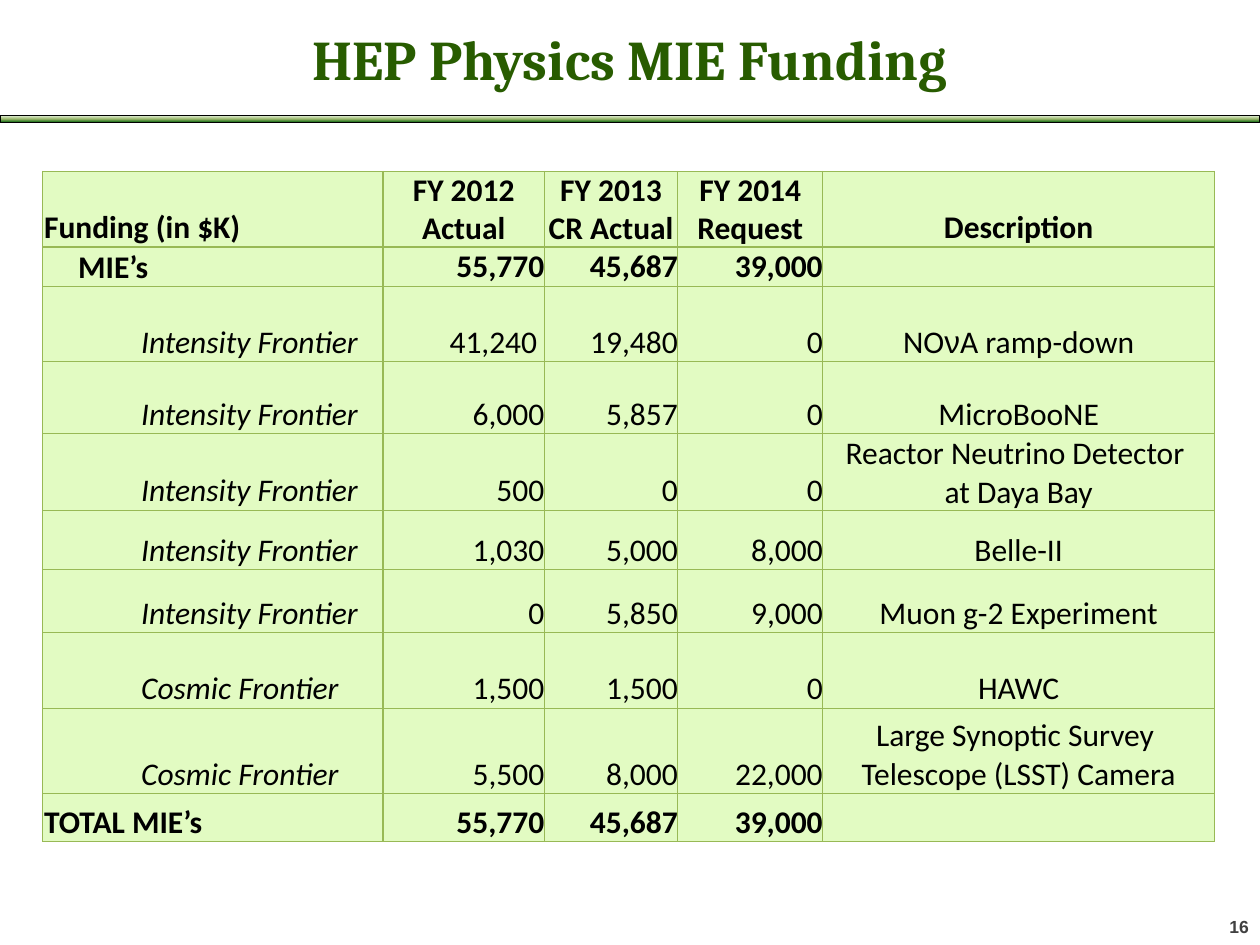
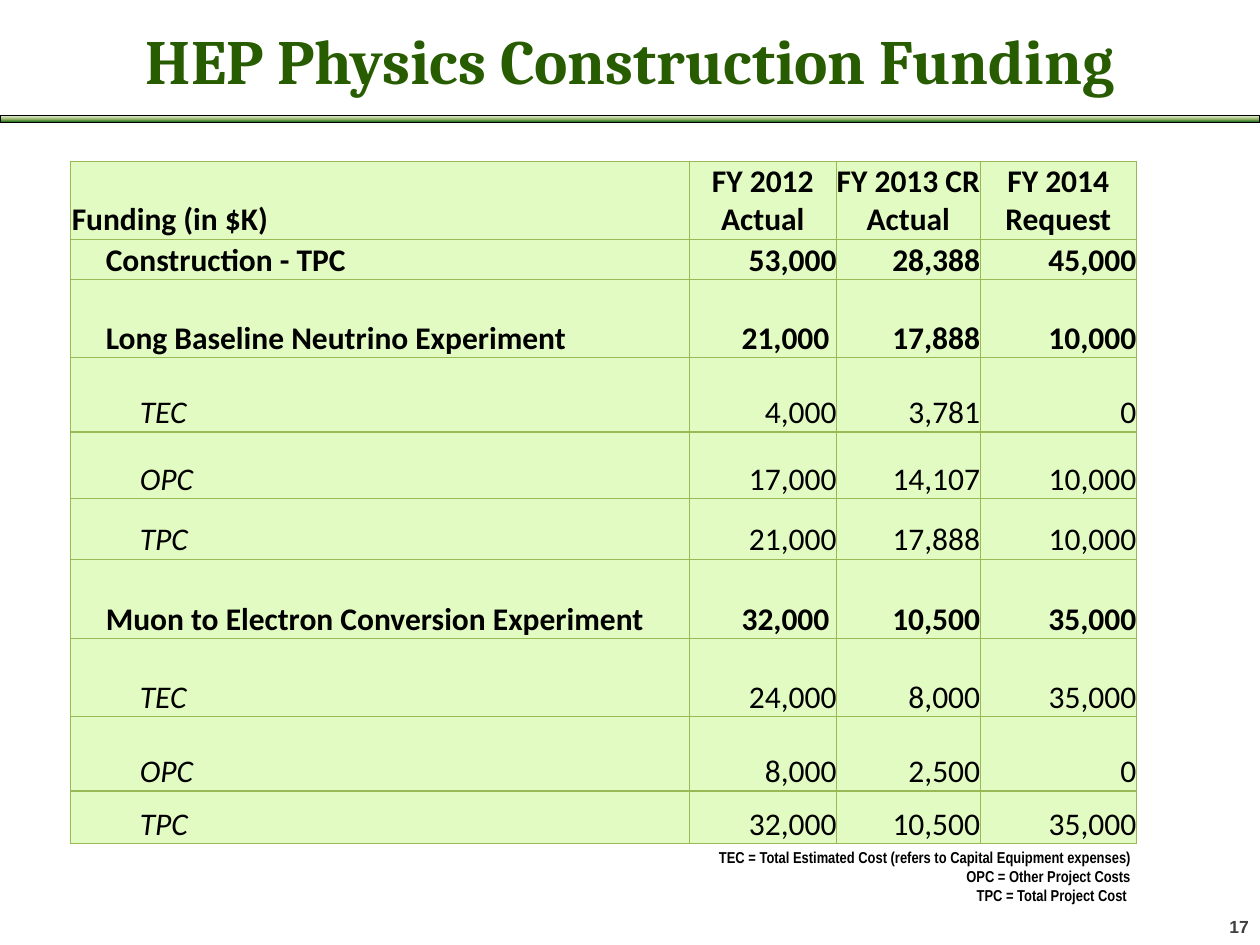
from lxml import etree
from pptx import Presentation
from pptx.dml.color import RGBColor
from pptx.enum import shapes, text
from pptx.oxml import ns
from pptx.util import Inches, Pt

HUES = {"title": "285C00", "cell": "E2FBC2", "edge": "98B955", "ink": "000000",
        "page": "404040", "top": "DDEBCF", "mid": "9CB86E", "low": "156B13"}

# style: bold, italic, left inset of the first column
STYLES = {"head": (True, False, 0.01), "main": (True, False, 0.28),
          "item": (False, True, 0.78), "part": (False, True, 0.55)}

YEARS = ["FY 2012 Actual", "FY 2013 CR Actual", "FY 2014 Request"]
NOVA = [("NO", "Calibri"), ("ν", "Arial"), ("A ramp-down", "Calibri")]

# each row: style, height, cells
SLIDES = [
    {"title": "HEP Physics MIE Funding", "size": 32, "top": 0.17, "page": "16",
     "spot": (0.34, 1.36), "cols": [2.7, 1.28, 1.06, 1.15, 3.11],
     "rows": [
         ("head", 0.6, ["Funding (in $K)", *YEARS, "Description"]),
         ("main", 0.31, ["MIE’s", "55,770", "45,687", "39,000", ""]),
         ("item", 0.6, ["Intensity Frontier", "41,240 ", "19,480", "0", [NOVA]]),
         ("item", 0.57, ["Intensity Frontier", "6,000", "5,857", "0", "MicroBooNE"]),
         ("item", 0.61, ["Intensity Frontier", "500", "0", "0",
                         ["Reactor Neutrino Detector ", "at Daya Bay"]]),
         ("item", 0.47, ["Intensity Frontier", "1,030", "5,000", "8,000", "Belle-II"]),
         ("item", 0.5, ["Intensity Frontier", "0", "5,850", "9,000",
                        "Muon g-2 Experiment"]),
         ("item", 0.6, ["Cosmic Frontier", "1,500", "1,500", "0", "HAWC"]),
         ("item", 0.68, ["Cosmic Frontier", "5,500", "8,000", "22,000",
                         ["Large Synoptic Survey ", "Telescope (LSST) Camera"]]),
         ("head", 0.38, ["TOTAL MIE’s", "55,770", "45,687", "39,000", ""]),
     ]},
    {"title": "HEP Physics Construction Funding", "size": 36, "top": 0.18, "page": "17",
     "spot": (0.56, 1.28), "cols": [4.91, 1.17, 1.14, 1.24],
     "rows": [
         ("head", 0.62, ["Funding (in $K)", *YEARS]),
         ("main", 0.32, ["Construction - TPC", "53,000", "28,388", "45,000"]),
         ("main", 0.62, ["Long Baseline Neutrino Experiment",
                         "21,000 ", "17,888", "10,000"]),
         ("part", 0.59, ["TEC", "4,000", "3,781", "0"]),
         ("part", 0.53, ["OPC", "17,000", "14,107", "10,000"]),
         ("part", 0.48, ["TPC", "21,000", "17,888", "10,000"]),
         ("main", 0.63, ["Muon to Electron Conversion Experiment",
                         "32,000 ", "10,500", "35,000"]),
         ("part", 0.62, ["TEC", "24,000", "8,000", "35,000"]),
         ("part", 0.59, ["OPC", "8,000", "2,500", "0"]),
         ("part", 0.42, ["TPC", "32,000", "10,500", "35,000"]),
     ],
     "notes": ["TEC = Total Estimated Cost (refers to Capital Equipment expenses)",
               "OPC = Other Project Costs", "TPC = Total Project Cost "]},
]

LEFT, MID, RIGHT = (text.PP_ALIGN.LEFT, text.PP_ALIGN.CENTER, text.PP_ALIGN.RIGHT)


def write(frame, words, size=18, font="Calibri", hue="ink", bold=False,
          ital=False, align=LEFT):
    """Fill a frame from a string or a list of paragraphs (strings or font runs)."""
    paras = [words] if isinstance(words, str) else words
    for n, para in enumerate(paras):
        line = frame.add_paragraph() if n else frame.paragraphs[0]
        line.alignment = align
        for part, face in [(para, font)] if isinstance(para, str) else para:
            if not part:
                continue
            run = line.add_run()
            run.text = part
            run.font.name, run.font.size = face, Pt(size)
            run.font.bold, run.font.italic = bold, ital
            run.font.color.rgb = RGBColor.from_string(HUES[hue])


def add_text(slide, box, words, wrap=False, **form):
    frame = slide.shapes.add_textbox(*map(Inches, box)).text_frame
    frame.word_wrap = wrap
    if wrap:
        frame.vertical_anchor = text.MSO_ANCHOR.MIDDLE
    else:
        frame.auto_size = text.MSO_AUTO_SIZE.SHAPE_TO_FIT_TEXT
    write(frame, words, **form)


def add_node(parent, tag, **attrs):
    return etree.SubElement(parent, ns.qn(tag), **attrs)


def add_band(slide):
    band = slide.shapes.add_shape(shapes.MSO_SHAPE.RECTANGLE, 0, Inches(0.92),
                                  Inches(10), Inches(0.05))
    band.shadow.inherit = False
    band.line.color.rgb = RGBColor.from_string(HUES["ink"])
    band.line.width = Pt(0.5)
    band.fill.gradient()
    grad = band.element.spPr.find(ns.qn("a:gradFill"))
    for child in list(grad):
        grad.remove(child)
    stops = add_node(grad, "a:gsLst")
    for n, hue in enumerate(("top", "mid", "low")):
        add_node(add_node(stops, "a:gs", pos=str(n * 50000)), "a:srgbClr", val=HUES[hue])
    add_node(grad, "a:lin", ang="5400000", scaled="0")


def style_cell(cell, left, edge):
    cell.vertical_anchor = text.MSO_ANCHOR.BOTTOM
    cell.margin_left = Inches(left)
    cell.margin_right = cell.margin_top = Inches(edge)
    cell.margin_bottom = 0
    props = cell._tc.get_or_add_tcPr()
    for side in "LRTB":
        line = add_node(props, f"a:ln{side}", w=str(Pt(0.75)))
        add_node(add_node(line, "a:solidFill"), "a:srgbClr", val=HUES["edge"])
    cell.fill.solid()
    cell.fill.fore_color.rgb = RGBColor.from_string(HUES["cell"])


def add_grid(slide, spot, cols, rows):
    size = sum(cols), sum(high for _, high, _ in rows)
    grid = slide.shapes.add_table(len(rows), len(cols),
                                  *map(Inches, (*spot, *size))).table
    grid.first_row = grid.horz_banding = False
    for col, wide in zip(grid.columns, cols):
        col.width = Inches(wide)
    for r, (style, high, cells) in enumerate(rows):
        grid.rows[r].height = Inches(high)
        bold, ital, left = STYLES[style]
        for c, words in enumerate(cells):
            cell = grid.cell(r, c)
            edge = 0 if 1 <= c <= 3 else 0.01
            style_cell(cell, edge if c else left, edge)
            align = LEFT if c == 0 else MID if r == 0 or c == 4 else RIGHT
            write(cell.text_frame, words, bold=bold, ital=ital and c == 0, align=align)


def main():
    deck = Presentation()
    deck.slide_width, deck.slide_height = Inches(10), Inches(7.5)
    for data in SLIDES:
        slide = deck.slides.add_slide(deck.slide_layouts[6])
        add_text(slide, (0, data["top"], 10, 0.58), data["title"], wrap=True,
                 size=data["size"], font="Cambria", hue="title", bold=True, align=MID)
        add_grid(slide, data["spot"], data["cols"], data["rows"])
        add_band(slide)
        add_text(slide, (9.66, 7.22, 0.36, 0.27), data["page"], size=10,
                 font="Arial", hue="page", bold=True)
        if "notes" in data:
            add_text(slide, (5.57, 6.68, 3.5, 0.56), data["notes"], size=9,
                     font="Arial Narrow", bold=True, align=RIGHT)
    deck.save("out.pptx")


if __name__ == "__main__":
    main()
